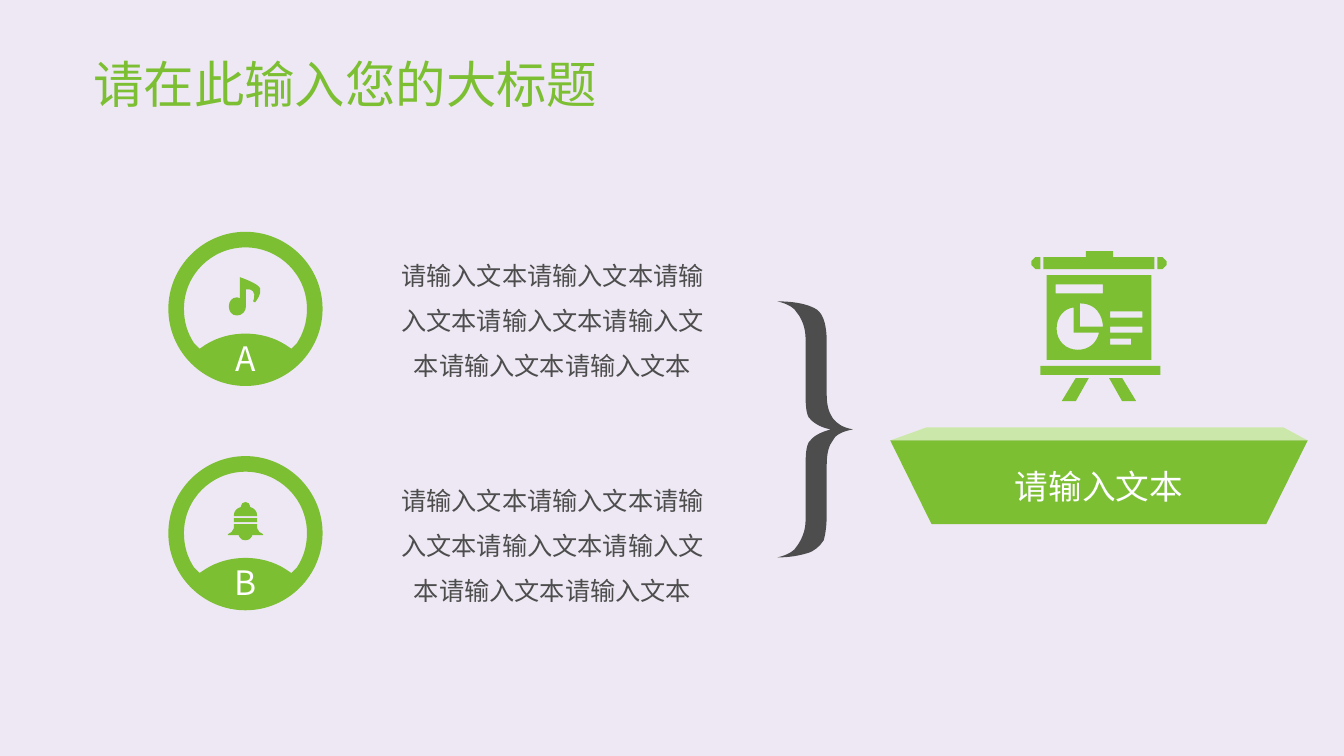
import pptx
import pptx.dml.color
import pptx.enum.shapes
import pptx.enum.text
import pptx.oxml.ns
import pptx.util
from lxml import etree

# The slide is a grid of 1333 columns by 750 rows, 100 cells to the inch.
COLUMNS, ROWS = 1333, 750
CELL = pptx.util.Inches(0.01)
GREEN, PALE_GREEN, GREY, WHITE, LILAC = "7CBF33", "CBE8AA", "4D4D4D", "FFFFFF", "EEE8F4"
FONT = "Noto Sans CJK SC"
ANCHOR, ALIGN = pptx.enum.text.MSO_ANCHOR, pptx.enum.text.PP_ALIGN
BODY = "请输入文本" * 7


def cells(count):
    return round(count * CELL)


def paint(fill, colour):
    fill.solid()
    fill.fore_color.rgb = pptx.dml.color.RGBColor.from_string(colour)


def make_flat(shape, colour):
    shape.shadow.inherit = False
    shape.line.fill.background()
    paint(shape.fill, colour)


def set_format(target, values):
    for key, value in values.items():
        setattr(target, key, value)


def write(shape, text, size, colour, spacing=1.0, align=ALIGN.CENTER,
          anchor=ANCHOR.MIDDLE, **margins):
    frame = shape.text_frame
    set_format(frame, {"word_wrap": True, "vertical_anchor": anchor,
                       "auto_size": pptx.enum.text.MSO_AUTO_SIZE.NONE})
    set_format(frame, {key: cells(value) for key, value in margins.items()})
    paragraph = frame.paragraphs[0]
    set_format(paragraph, {"alignment": align, "line_spacing": spacing})
    run = paragraph.add_run()
    run.text = text
    set_format(run.font, {"size": pptx.util.Pt(size), "name": FONT})
    paint(run.font.fill, colour)
    # East Asian characters need their own font entry
    properties = run.font._element
    etree.SubElement(properties, pptx.oxml.ns.qn("a:ea")).set("typeface", FONT)


# Contours: lists of marks. Two numbers are a corner, six are a Bézier curve.

def box(left, top, right, bottom):
    return [(left, top), (right, top), (right, bottom), (left, bottom)]


def mirror(marks, axis):
    """The same contour, reflected in a vertical axis and run backwards."""
    flipped = [tuple(2 * axis - value if i % 2 == 0 else value
                     for i, value in enumerate(mark)) for mark in marks]
    result = [flipped[-1][-2:]]
    for before, mark in zip(flipped[-2::-1], flipped[:0:-1]):
        result.append(mark[2:4] + mark[:2] + before[-2:] if len(mark) == 6 else before[-2:])
    return result


def symmetric(half, axis):
    other = mirror(half, axis)
    return half + (other[1:] if half[-1][-2] == axis else other)


def outline(slide, contours, colour):
    builder = None
    for marks in contours:
        points = [(cells(mark[i]), cells(mark[i + 1]))
                  for mark in marks for i in range(0, len(mark), 2)]
        if builder is None:
            builder = slide.shapes.build_freeform(*points[0], scale=1.0)
        else:
            builder.move_to(*points[0])
        builder.add_line_segments(points[1:], close=True)
    shape = builder.convert_to_shape()
    # Join the three segments of each curve into one Bézier element
    segments = iter(list(shape._element.iter(pptx.oxml.ns.qn("a:lnTo"))))
    for marks in contours:
        for mark in marks[1:]:
            curve = next(segments)
            if len(mark) == 6:
                curve.tag = pptx.oxml.ns.qn("a:cubicBezTo")
                for extra in (next(segments), next(segments)):
                    curve.append(extra[0])
                    extra.getparent().remove(extra)
    make_flat(shape, colour)
    return shape


# Parts of the slide

def add_backdrop(slide):
    backdrop = slide.shapes.add_shape(pptx.enum.shapes.MSO_SHAPE.RECTANGLE, 0, 0,
                                      cells(COLUMNS), cells(ROWS))
    make_flat(backdrop, LILAC)
    slide.shapes._spTree.insert(2, backdrop._element)


def add_title(slide, text):
    title = slide.shapes.title
    set_format(title, {"left": cells(82.5), "top": cells(40),
                       "width": cells(1131), "height": cells(93)})
    write(title, text, 36, GREEN, spacing=0.9, align=ALIGN.LEFT)


def add_badge(slide, letter, x, y):
    rim = [(0, -76.5), (42, -76.5, 76.5, -42, 76.5, 0), (76.5, 42, 42, 76.5, 0, 76.5)]
    window = [(0, -61), (33.5, -61, 61, -34, 61, 0), (61, 13, 57.5, 24, 51, 34),
              (45.5, 39.5), (39.5, 35.5), (28.5, 28.5, 14.5, 24.5, 0, 24.5)]
    halves = [[tuple(value + (y if i % 2 else x) for i, value in enumerate(mark))
               for mark in half] for half in (window, rim)]
    badge = outline(slide, [symmetric(half, x) for half in halves], GREEN)
    write(badge, letter, 24, WHITE, anchor=ANCHOR.BOTTOM, margin_bottom=8)


def add_body(slide, text, top):
    body = slide.shapes.add_textbox(cells(378.5), cells(top), cells(339), cells(148))
    write(body, text, 18, GREY, spacing=1.5)


def add_note(slide):
    note = [(235, 295), (236, 295, 238, 296, 238, 296), (238, 275),
            (238, 275, 256, 281, 258, 286), (260, 292, 253, 300, 253, 300), (251, 299),
            (251, 299, 254, 293, 251, 289), (250, 287, 247, 287, 244, 287), (244, 304),
            (244, 309, 240, 313, 235, 313), (230, 313, 227, 309, 227, 304),
            (227, 299, 230, 295, 235, 295)]
    outline(slide, [note], GREEN)


def add_bell(slide, axis):
    skirt = [(axis, 520), (255, 520), (255, 524), (256, 527, 258, 529, 261, 530),
             (261, 531), (250, 531), (250, 532), (249, 534, 247, 536, axis, 536)]
    dome = [(axis, 498), (246, 498, 248, 500, 248, 502), (248, 503),
            (252, 504, 255, 507, 255, 511), (255, 512)]
    outline(slide, [symmetric(skirt, axis), box(232, 514, 255, 518),
                    symmetric(dome, axis)], GREEN)


def add_brace(slide):
    brace = [(799, 336), (799, 325, 795, 316, 791, 311), (788, 305, 780, 301, 771, 299),
             (789, 299, 802, 302, 810, 307), (817, 312, 820, 323, 820, 340), (820, 392),
             (820, 402, 822, 409, 826, 415), (830, 420, 835, 424, 846, 426),
             (835, 428, 828, 432, 826, 437), (822, 442, 820, 450, 820, 461), (820, 509),
             (820, 520, 819, 529, 817, 536), (813, 542, 808, 547, 800, 549),
             (793, 551, 784, 553, 771, 553), (780, 551, 788, 547, 791, 541),
             (795, 535, 799, 527, 799, 516), (799, 467),
             (799, 454, 799, 445, 802, 439), (806, 433, 813, 429, 824, 426),
             (813, 424, 806, 419, 802, 414), (799, 408, 799, 399, 799, 388)]
    outline(slide, [brace], GREY)


def add_stand(slide, text):
    outline(slide, [[(919, 424), (1273, 424), (1297, 437), (883, 437)]], PALE_GREEN)
    front = outline(slide, [[(883, 437), (1297, 437), (1256, 520), (924, 520)]], GREEN)
    write(front, text, 24, WHITE, spacing=1.2, margin_left=47, margin_right=47)


def add_easel(slide, axis):
    rail = [(1035, 255), (1077, 255), (1077, 249), (1104, 249), (1104, 255),
            (1145, 255), (1145, 267), (1035, 267)]
    knob = [(1023, 259), (1027, 255), (1032, 255), (1032, 267), (1027, 267), (1023, 263)]
    leg = [(1080, 375), (1067, 398), (1053, 398), (1067, 375)]
    board, shelf = box(1038, 273, 1142, 357), box(1032, 363, 1151, 372)
    # Openings in the board: heading, pie with its cut-out slice, three lines
    heading = box(1047, 282, 1094, 291)
    pie = [(1069, 347), (1080, 347, 1088, 340, 1090, 330), (1065, 330), (1065, 305),
           (1055, 306, 1048, 315, 1048, 326), (1048, 338, 1057, 347, 1069, 347)]
    pie_slice = [(1094, 324), (1094, 324, 1094, 301, 1071, 301), (1071, 324)]
    lines = [box(1101, top, right, top + 6)
             for top, right in ((309, 1133), (324, 1133), (336, 1122))]
    outline(slide, [rail, knob, mirror(knob, axis), board, shelf, leg, mirror(leg, axis),
                    heading, pie, pie_slice, *lines], GREEN)


def main():
    deck = pptx.Presentation()
    set_format(deck, {"slide_width": cells(COLUMNS), "slide_height": cells(ROWS)})
    slide = deck.slides.add_slide(deck.slide_layouts[5])
    add_backdrop(slide)
    add_title(slide, "请在此输入您的大标题")

    # Two items on the left
    for item, letter in enumerate("AB"):
        add_badge(slide, letter, 243.5, 306.5 + 222.5 * item)
        add_body(slide, BODY, 236.5 + 223 * item)
    add_bell(slide, 243.5)
    add_note(slide)

    # Their sum on the right
    add_brace(slide)
    add_stand(slide, "请输入文本")
    add_easel(slide, 1090)
    deck.save("out.pptx")


if __name__ == "__main__":
    main()
